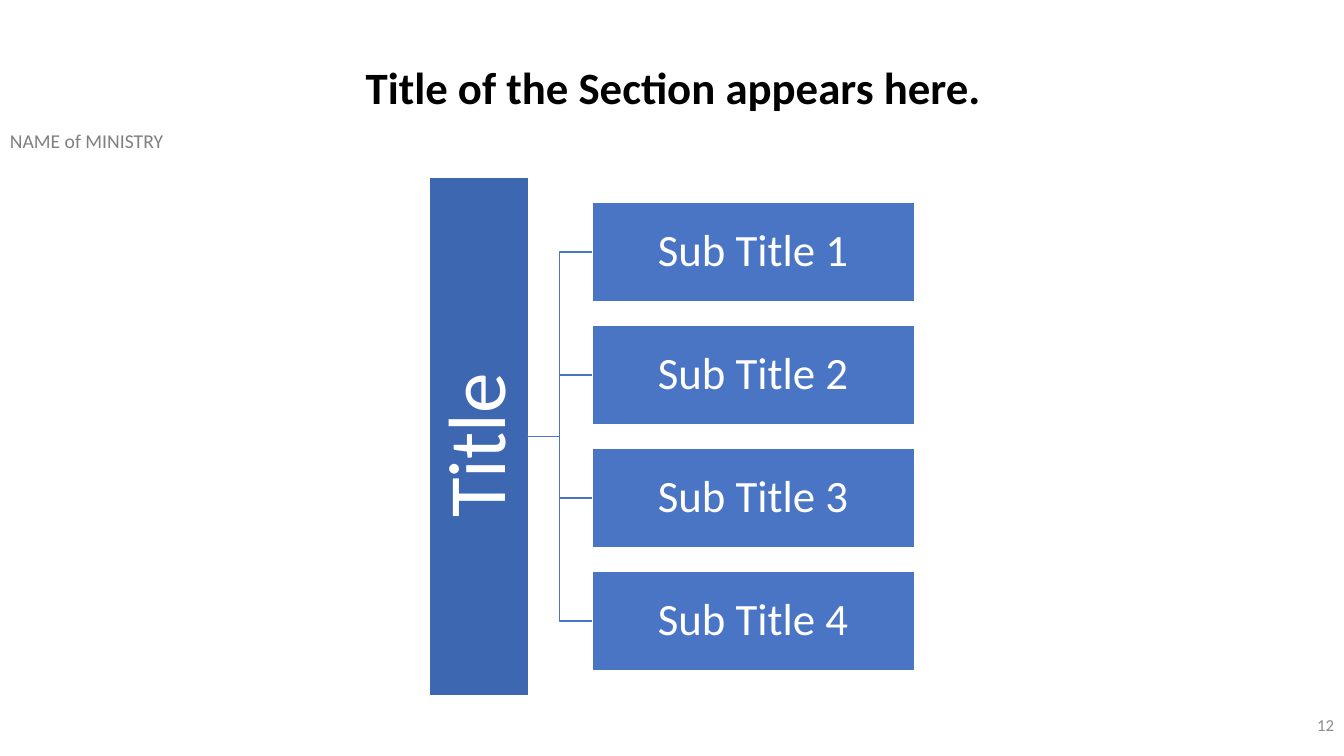
from dataclasses import dataclass

from lxml.etree import SubElement
from pptx import Presentation
from pptx.dml.color import RGBColor
from pptx.enum.shapes import MSO_CONNECTOR as Connector, MSO_SHAPE as Preset
from pptx.enum.text import MSO_ANCHOR as Anchor, MSO_AUTO_SIZE as AutoSize, PP_ALIGN as Align
from pptx.oxml.ns import qn
from pptx.util import Emu, Pt

PX = 9144
TITLE_ONLY = 5
BOTTOM, LEFT = 2, 1
FONT = "Calibri"
BLACK, WHITE, BLUE, DARK_BLUE = "000000", "FFFFFF", "4A75C5", "3E67B2"
MINISTRY_GREY, NUMBER_GREY = "808080", "8C8C8C"
SUBTITLE_TOP, SUBTITLE_PITCH = 201, 122
TRUNK_RIGHT, TRUNK_MIDDLE = 523, 433


@dataclass(frozen=True)
class Box:
    left: int
    top: int
    width: int
    height: int

    def emu(self) -> tuple:
        return tuple(px(n) for n in (self.left, self.top, self.width, self.height))


@dataclass(frozen=True)
class Label:
    text: str
    size: int
    color: str
    align: Align = Align.CENTER
    anchor: Anchor = Anchor.MIDDLE
    bold: bool = False
    spacing: float = 0.9


@dataclass(frozen=True)
class Node:
    box: Box
    label: Label
    fill: str
    inset: int
    rotation: int = 0


def px(length: int) -> Emu:
    return Emu(length * PX)


def rgb(color: str) -> RGBColor:
    return RGBColor.from_string(color)


def write(shape, label: Label) -> None:
    frame = shape.text_frame
    frame.word_wrap = True
    frame.auto_size = AutoSize.NONE
    frame.vertical_anchor = label.anchor
    paragraph = frame.paragraphs[0]
    paragraph.text = label.text
    paragraph.alignment = label.align
    paragraph.line_spacing = label.spacing
    font = paragraph.font
    font.name, font.size, font.bold = FONT, Pt(label.size), label.bold
    font.color.rgb = rgb(label.color)


def add_text(slide, box: Box, label: Label) -> None:
    write(slide.shapes.add_textbox(*box.emu()), label)


def add_node(slide, node: Node):
    shape = slide.shapes.add_shape(Preset.RECTANGLE, *node.box.emu())
    shape.shadow.inherit = False
    shape.rotation = node.rotation
    shape.fill.solid()
    shape.fill.fore_color.rgb = rgb(node.fill)
    shape.line.color.rgb = rgb(WHITE)
    shape.line.width = Pt(1)
    write(shape, node.label)
    frame = shape.text_frame
    frame.margin_left = frame.margin_right = px(node.inset)
    frame.margin_top = frame.margin_bottom = px(node.inset)
    return shape


def add_branch(slide, trunk, subtitle) -> None:
    branch = slide.shapes.add_connector(Connector.ELBOW, 0, 0, 0, 0)
    branch.begin_connect(trunk, BOTTOM)
    branch.end_connect(subtitle, LEFT)
    branch.begin_x, branch.begin_y = px(TRUNK_RIGHT), px(TRUNK_MIDDLE)
    branch.line.color.rgb = rgb(BLUE)
    branch.line.width = Pt(1)
    SubElement(branch._element.spPr, qn("a:effectLst"))


def main() -> None:
    deck = Presentation()
    deck.slide_width, deck.slide_height = px(1333), px(750)
    slide = deck.slides.add_slide(deck.slide_layouts[TITLE_ONLY])

    heading = slide.shapes.title
    heading.left, heading.top, heading.width, heading.height = Box(328, 60, 680, 107).emu()
    write(heading, Label("Title of the Section appears here.", 32, BLACK,
                         anchor=Anchor.TOP, bold=True))

    add_text(slide, Box(0, 123, 290, 34),
             Label("NAME of MINISTRY", 14, MINISTRY_GREY, Align.LEFT, Anchor.TOP, spacing=1.0))
    add_text(slide, Box(1033, 699, 300, 40),
             Label("12", 12, NUMBER_GREY, Align.RIGHT, spacing=1.0))

    trunk = add_node(slide, Node(Box(218, 384, 514, 98), Label("Title ", 58, WHITE),
                                 DARK_BLUE, 4, 270))
    for row in range(4):
        box = Box(587, SUBTITLE_TOP + row * SUBTITLE_PITCH, 320, 98)
        label = Label(f"Sub Title {row + 1}", 32, WHITE)
        subtitle = add_node(slide, Node(box, label, BLUE, 2))
        add_branch(slide, trunk, subtitle)

    deck.save("out.pptx")


if __name__ == "__main__":
    main()
